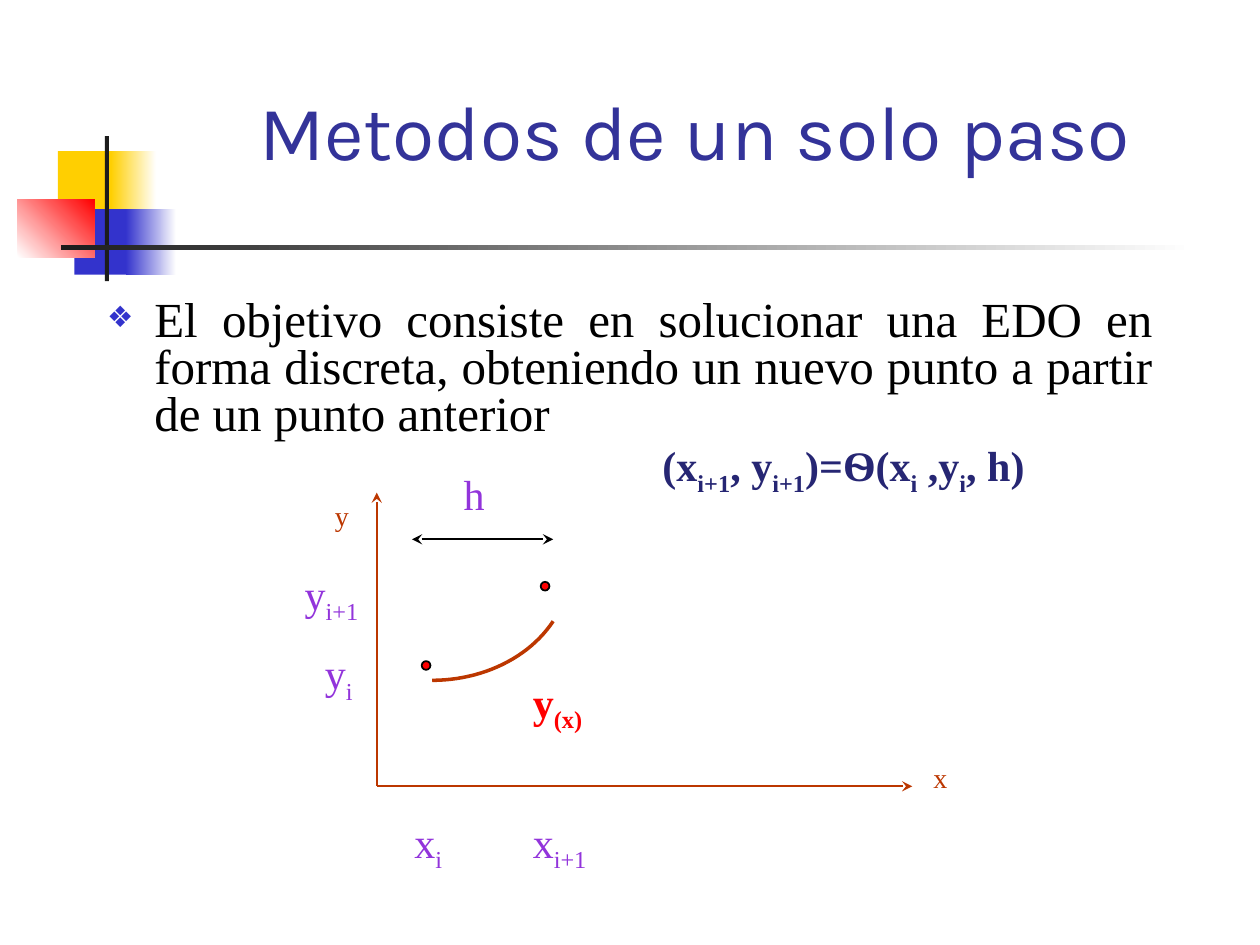
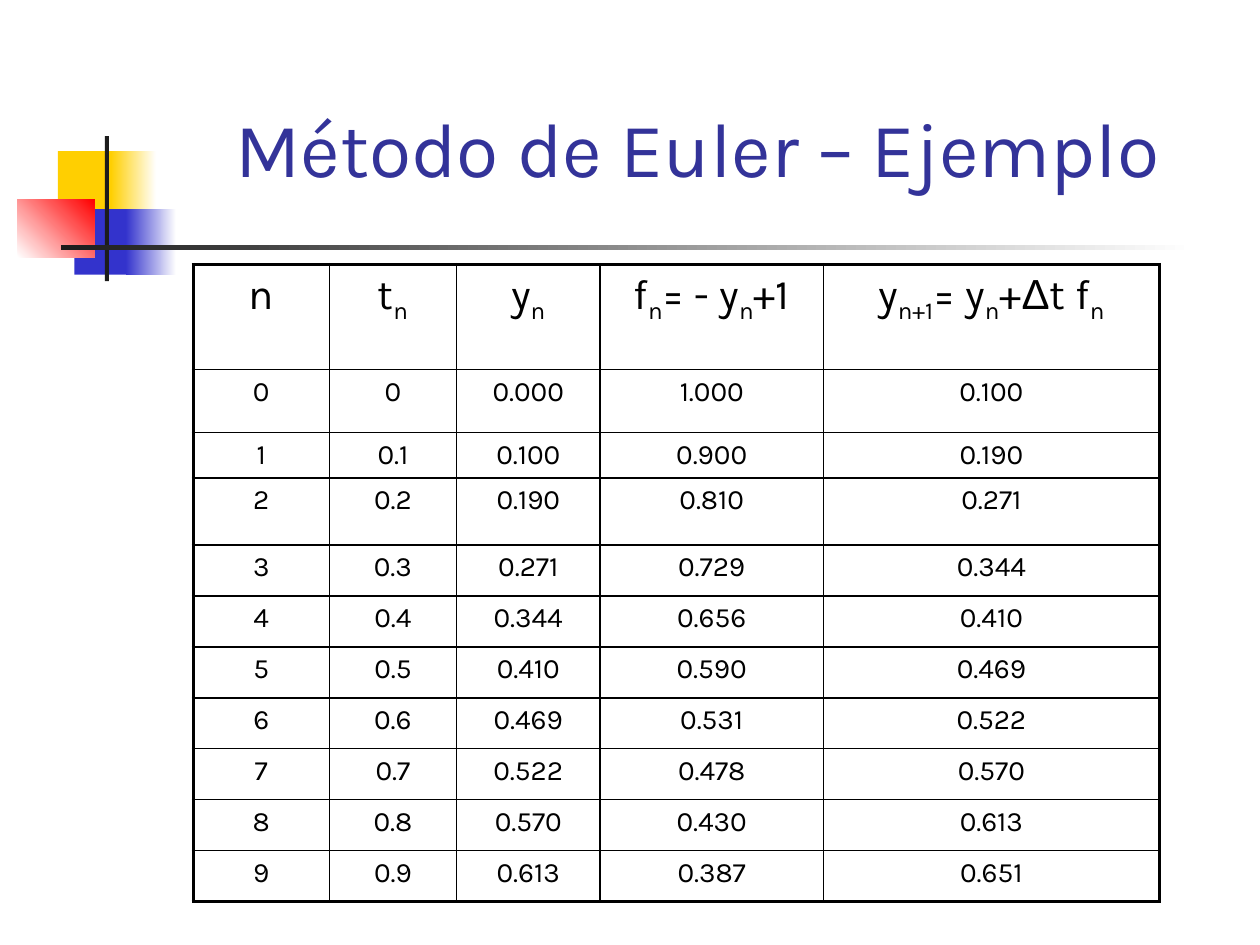
from pptx import Presentation
from pptx.dml.color import RGBColor
from pptx.enum import shapes, text
from pptx.oxml import parse_xml
from pptx.oxml.ns import nsdecls, qn
from pptx.util import Pt
from lxml import etree

BLACK = RGBColor(0x00, 0x00, 0x00)
WHITE = RGBColor(0xFF, 0xFF, 0xFF)
YELLOW = RGBColor(0xFF, 0xCF, 0x01)
BLUE = RGBColor(0x33, 0x33, 0xCC)
RED = RGBColor(0xFF, 0x00, 0x00)
CHARCOAL = RGBColor(0x1C, 0x1C, 0x1C)
TITLE = RGBColor(0x33, 0x33, 0x99)
RUST = RGBColor(0xBC, 0x37, 0x00)
PURPLE = RGBColor(0x92, 0x34, 0xDB)
NAVY = RGBColor(0x26, 0x26, 0x73)
SANS = "Karla"
SERIF = "Times New Roman"


def place(sp, x, y, w, h):
    sp.left, sp.top, sp.width, sp.height = Pt(x), Pt(y), Pt(w), Pt(h)


def write(p, marked, size, color, font, bold=False):
    for i, part in enumerate(marked.split("|")):
        if not part:
            continue
        r = p.add_run()
        r.text = part
        r.font.size = Pt(size)
        r.font.bold = bold
        r.font.name = "Arial" if part == "Δ" else font
        r.font.color.rgb = color
        if i % 2:
            r.font._element.set("baseline", "-25000")


prs = Presentation()
prs.slide_width, prs.slide_height = Pt(720), Pt(540)
s1 = prs.slides.add_slide(prs.slide_layouts[1])
s2 = prs.slides.add_slide(prs.slide_layouts[5])

ornaments = [
    (33.1, 86.4, 34.6, 37.4, YELLOW, None, 0),
    (63.4, 86.4, 25.9, 37.4, YELLOW, WHITE, 0),
    (42.5, 119.5, 33.1, 37.4, BLUE, None, 0),
    (72, 119.5, 28.8, 37.4, BLUE, WHITE, 0),
    (10, 113.8, 43.9, 33.1, WHITE, RED, 45),
    (60, 77.8, 2.2, 82.8, CHARCOAL, None, 0),
    (34.6, 140.2, 648, 2.4, CHARCOAL, WHITE, 0),
]
tree = prs.slide_master.shapes._spTree
for i, (x, y, w, h, start, end, angle) in enumerate(ornaments):
    sp = s1.shapes.add_shape(shapes.MSO_SHAPE.RECTANGLE, Pt(x), Pt(y), Pt(w), Pt(h))
    sp.shadow.inherit = False
    sp.line.fill.background()
    if end is None:
        sp.fill.solid()
        sp.fill.fore_color.rgb = start
    else:
        sp.fill.gradient()
        sp.fill.gradient_angle = angle
        for stop, color in zip(sp.fill.gradient_stops, (start, end)):
            stop.color.rgb = color
    sp._element.nvSpPr.cNvPr.set("id", str(100 + i))
    tree.insert(2 + i, sp._element)

titles = [
    (s1, "Metodos de un solo paso", (90.7, 16.6, 613.4, 115.2),
     text.PP_ALIGN.CENTER, text.MSO_ANCHOR.MIDDLE),
    (s2, "Método de Euler – Ejemplo", (127.4, 18, 562.3, 95.8),
     text.PP_ALIGN.LEFT, text.MSO_ANCHOR.BOTTOM),
]
for s, caption, box, align, anchor in titles:
    place(s.shapes.title, *box)
    tf = s.shapes.title.text_frame
    tf.auto_size = text.MSO_AUTO_SIZE.NONE
    tf.vertical_anchor = anchor
    p = tf.paragraphs[0]
    p.alignment = align
    write(p, caption, 44, TITLE, SANS)

body = s1.placeholders[1]
place(body, 54, 167.8, 612, 66.2)
tf = body.text_frame
tf.auto_size = text.MSO_AUTO_SIZE.NONE
p = tf.paragraphs[0]
p.alignment = text.PP_ALIGN.JUSTIFY
p.line_spacing = 0.8
p.space_before = Pt(5.6)
write(p, "El objetivo consiste en solucionar una EDO en forma discreta, "
      "obteniendo un nuevo punto a partir de un punto anterior", 28, BLACK, SERIF)
pPr = p._p.get_or_add_pPr()
pPr.set("marL", str(Pt(27)))
pPr.set("indent", str(-Pt(27)))
for bullet in (f'<a:buClr {nsdecls("a")}><a:srgbClr val="{BLUE}"/></a:buClr>',
               f'<a:buSzPct {nsdecls("a")} val="60000"/>',
               f'<a:buFont {nsdecls("a")} typeface="Arial"/>',
               f'<a:buChar {nsdecls("a")} char="❖"/>'):
    pPr.append(parse_xml(bullet))

arrows = [
    (215.3, 281.5, 215.3, 449.3, RUST, ["headEnd"]),
    (215.3, 449.3, 521.3, 449.3, RUST, ["tailEnd"]),
    (235.4, 308.2, 316.1, 308.2, BLACK, ["headEnd", "tailEnd"]),
]
for x1, y1, x2, y2, color, ends in arrows:
    c = s1.shapes.add_connector(shapes.MSO_CONNECTOR.STRAIGHT, Pt(x1), Pt(y1), Pt(x2), Pt(y2))
    c.line.color.rgb = color
    c.line.width = Pt(1)
    spPr = c._element.spPr
    for end in ends:
        etree.SubElement(spPr.find(qn("a:ln")), qn("a:" + end), type="stealth")
    etree.SubElement(spPr, qn("a:effectLst"))

controls = [(316.1, 355), (302.4, 375.8), (275.8, 388.8), (247, 388.8)]
curve = []
for step in range(25):
    t = step / 24
    weights = ((1 - t) ** 3, 3 * t * (1 - t) ** 2, 3 * t ** 2 * (1 - t), t ** 3)
    curve.append([Pt(sum(k * c[axis] for k, c in zip(weights, controls))) for axis in (0, 1)])
fb = s1.shapes.build_freeform(*curve[0])
fb.add_line_segments(curve[1:], close=False)
sp = fb.convert_to_shape()
sp.shadow.inherit = False
sp.fill.background()
sp.line.color.rgb = RUST
sp.line.width = Pt(2)

for x, y in [(241, 377.8), (309, 332.5)]:
    sp = s1.shapes.add_shape(shapes.MSO_SHAPE.OVAL, Pt(x), Pt(y), Pt(5), Pt(5))
    sp.shadow.inherit = False
    sp.fill.solid()
    sp.fill.fore_color.rgb = RED
    sp.line.color.rgb = BLACK
    sp.line.width = Pt(1)

labels = [
    ("y", 184.3, 281.5, 22.3, 16, RUST, False),
    ("x", 526.3, 431.3, 22.3, 16, RUST, False),
    ("h", 257.8, 264.2, 26.6, 24, PURPLE, False),
    ("y|i+1|", 167, 321.1, 48.2, 24, PURPLE, False),
    ("y|i|", 178.6, 366.5, 31, 24, PURPLE, False),
    ("x|i|", 229.7, 463, 31, 24, PURPLE, False),
    ("x|i+1|", 297.4, 463, 48.2, 24, PURPLE, False),
    ("y|(x)|", 297.4, 383, 45.4, 24, RED, True),
    ("(x|i+1|, y|i+1|)=Ѳ(x|i| ,y|i|, h)", 371.5, 247.7, 230.4, 24, NAVY, True),
]
for label, x, y, w, size, color, bold in labels:
    h = 36.5 if size == 24 else 26.6
    tf = s1.shapes.add_textbox(Pt(x), Pt(y), Pt(w), Pt(h)).text_frame
    tf.word_wrap = False
    tf.auto_size = text.MSO_AUTO_SIZE.SHAPE_TO_FIT_TEXT
    write(tf.paragraphs[0], label, size, color, SERIF, bold)

rows = [["n", "t|n|", "y|n|", "f|n|= - y|n|+1", "y|n+1|= y|n|+||Δ||t f|n|"]]
y = 0
for n in range(10):
    f = 1 - y
    y_next = y + 0.1 * f
    rows.append([str(n), f"{n / 10:g}", f"{y:.3f}", f"{f:.3f}", f"{y_next:.3f}"])
    y = y_next

widths = [77.8, 72.7, 82, 127.7, 192]
heights = [60, 36, 26, 38.3] + [29.1] * 7
table = s2.shapes.add_table(len(rows), len(widths), Pt(110.4), Pt(151.2),
                            Pt(sum(widths)), Pt(sum(heights))).table
table.first_row = table.horz_banding = False
for col, w in zip(table.columns, widths):
    col.width = Pt(w)
for row, h in zip(table.rows, heights):
    row.height = Pt(h)
for i, values in enumerate(rows):
    for j, value in enumerate(values):
        cell = table.cell(i, j)
        size = 16 if i else 24
        p = cell.text_frame.paragraphs[0]
        p.alignment = text.PP_ALIGN.CENTER
        p.space_before = Pt(size * 0.2)
        write(p, value, size, BLACK, SANS)
        outer = {"L": j == 0, "R": j == len(widths) - 1, "T": i == 0, "B": i == len(rows) - 1}
        tcPr = cell._tc.get_or_add_tcPr()
        for side, edge in outer.items():
            tcPr.append(parse_xml(
                f'<a:ln{side} {nsdecls("a")} w="{Pt(2.25 if edge else 1)}"><a:solidFill>'
                f'<a:srgbClr val="{BLACK}"/></a:solidFill></a:ln{side}>'))
        cell.fill.background()

prs.save("out.pptx")
